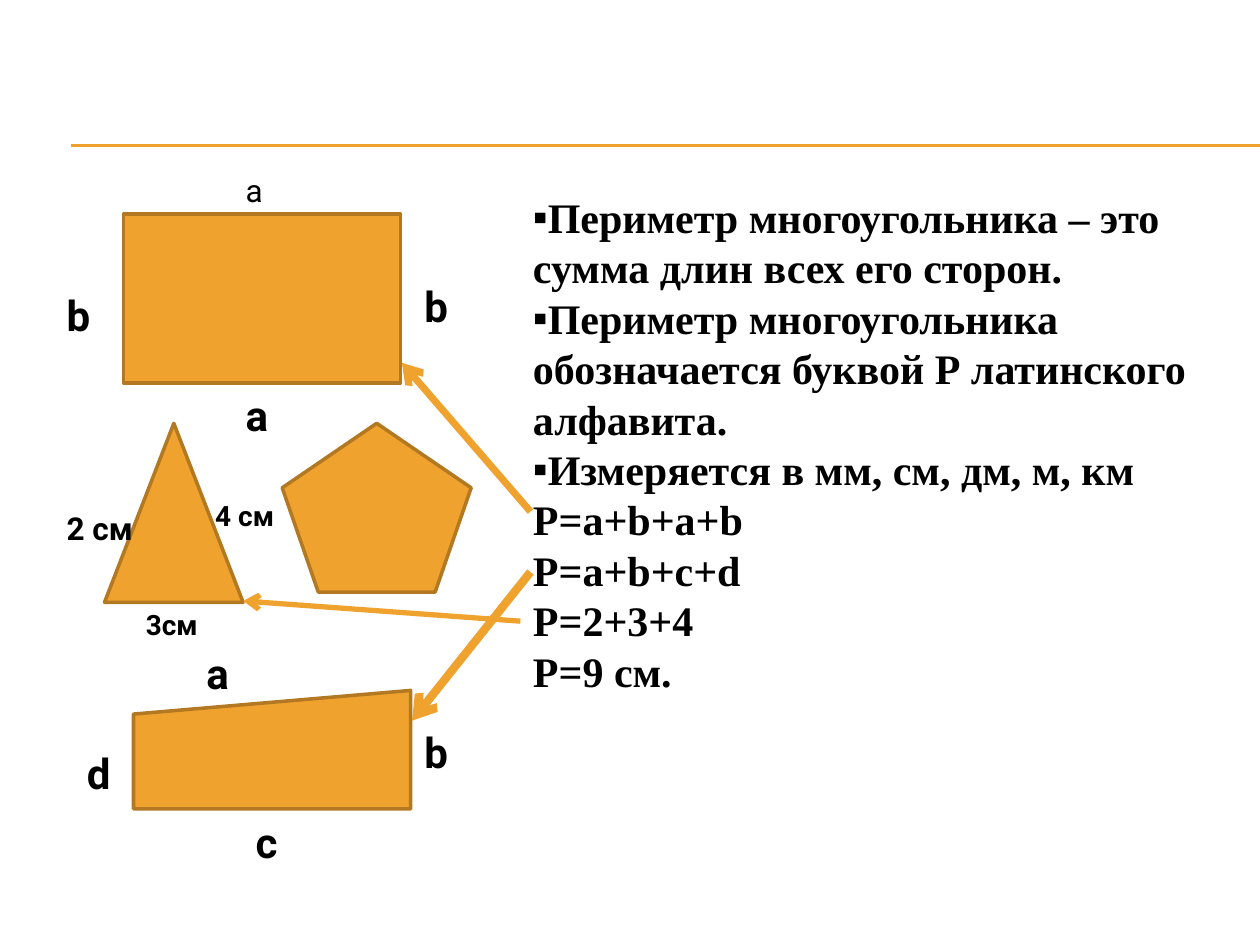
from dataclasses import dataclass

import pptx
import pptx.dml.color
import pptx.enum.shapes
import pptx.enum.text
import pptx.oxml
import pptx.oxml.ns
import pptx.util
from pptx.slide import Slide

SHAPE = pptx.enum.shapes.MSO_SHAPE
ALIGN = pptx.enum.text.PP_ALIGN
SLIDE_W = pptx.util.Inches(10)
SLIDE_H = pptx.util.Inches(7.5)
COL = SLIDE_W / 100
ROW = SLIDE_H / 75


@dataclass(frozen=True)
class Theme:
    accent: str = "F0A22E"
    edge: str = "B27822"
    ink: str = "000000"
    body_font: str = "Times New Roman"
    label_font: str = "Roboto"
    large: int = 24
    medium: int = 18
    small: int = 16
    body_leading: float = 28.8
    edge_width: float = 2
    rule_width: float = 0.75


@dataclass(frozen=True)
class Figure:
    kind: SHAPE
    col: float
    row: float
    cols: float
    rows: float


@dataclass(frozen=True)
class Label:
    text: str
    col: float
    row: float
    cols: float = 3.9
    rows: float = 5
    size: int = Theme.large
    bold: bool = True


@dataclass(frozen=True)
class Line:
    start: tuple[float, float]
    end: tuple[float, float]
    width: float = Theme.rule_width
    arrow: bool = False


T = Theme()

RULES = [Line((5.6, row), (100, row)) for row in (11.5, 11.6)]
FIGURES = [
    Figure(SHAPE.RECTANGLE, 9.8, 17, 22, 13.4),
    Figure(SHAPE.ISOSCELES_TRIANGLE, 8.3, 33.6, 11, 14.2),
    Figure(SHAPE.REGULAR_PENTAGON, 22.4, 33.6, 15, 13.4),
    Figure(SHAPE.FLOWCHART_MANUAL_INPUT, 10.6, 54.8, 22, 9.4),
]
LABELS = [
    Label("a", 18.5, 13.1, rows=4, size=T.medium, bold=False),
    Label("b", 32.7, 21.8),
    Label("b", 4.3, 22.5),
    Label("a", 18.5, 30.4, cols=3.1),
    Label("2 см", 4.3, 39.9, 9.1, 4, T.medium),
    Label("4 см", 16.1, 39.1, 7.1, 3.7, T.small),
    Label("3см", 10.6, 47.7, 8.7, 3.7, T.small),
    Label("a", 15.4, 50.9),
    Label("b", 32.7, 57.2),
    Label("c", 19.3, 64.3),
    Label("d", 5.9, 58.8),
]
ARROWS = [
    Line((42.1, 40.6), (31.9, 28.8), 4, True),
    Line((42.1, 45.4), (32.7, 57.2), 4.75, True),
    Line((41.3, 49.3), (19.3, 47.7), 3, True),
]
FACTS = [
    "Периметр многоугольника – это сумма длин всех его сторон.",
    "Периметр многоугольника обозначается буквой Р латинского алфавита.",
    "Измеряется в мм, см, дм, м, км",
]
FORMULAS = ["P=a+b+a+b", "P=a+b+c+d", "P=2+3+4", "P=9 см."]


def rgb(value: str) -> pptx.dml.color.RGBColor:
    return pptx.dml.color.RGBColor.from_string(value)


def box(col: float, row: float, cols: float, rows: float) -> tuple[int, ...]:
    return round(col * COL), round(row * ROW), round(cols * COL), round(rows * ROW)


def add_run(p, text: str, font: str, size: int, bold: bool = True) -> None:
    r = p.add_run()
    r.text = text
    r.font.name = font
    r.font.size = pptx.util.Pt(size)
    r.font.bold = bold
    r.font.color.rgb = rgb(T.ink)


def add_figure(s: Slide, figure: Figure) -> None:
    sp = s.shapes.add_shape(
        figure.kind, *box(figure.col, figure.row, figure.cols, figure.rows))
    sp.shadow.inherit = False
    sp.fill.solid()
    sp.fill.fore_color.rgb = rgb(T.accent)
    sp.line.color.rgb = rgb(T.edge)
    sp.line.width = pptx.util.Pt(T.edge_width)


def add_label(s: Slide, label: Label) -> None:
    sp = s.shapes.add_textbox(*box(label.col, label.row, label.cols, label.rows))
    tf = sp.text_frame
    tf.word_wrap = True
    add_run(tf.paragraphs[0], label.text, T.label_font, label.size, label.bold)


def add_line(s: Slide, line: Line) -> None:
    start = box(*line.start, 0, 0)[:2]
    end = box(*line.end, 0, 0)[:2]
    cxn = s.shapes.add_connector(
        pptx.enum.shapes.MSO_CONNECTOR.STRAIGHT, *start, *end)
    cxn.line.color.rgb = rgb(T.accent)
    cxn.line.width = pptx.util.Pt(line.width)
    if line.arrow:
        ln = cxn.line._get_or_add_ln()
        ln.append(pptx.oxml.parse_xml(
            f'<a:tailEnd {pptx.oxml.ns.nsdecls("a")} type="arrow"/>'))
    cxn._element.spPr.append(pptx.oxml.parse_xml(
        f'<a:effectLst {pptx.oxml.ns.nsdecls("a")}/>'))


def set_bullet(p, char: str | None) -> None:
    pPr = p._p.get_or_add_pPr()
    pPr.set("marL", "0")
    pPr.set("indent", "0")
    tag = f'buChar char="{char}"' if char else "buNone"
    name, _, attributes = tag.partition(" ")
    pPr.append(pptx.oxml.parse_xml(
        f'<a:{name} {pptx.oxml.ns.nsdecls("a")} {attributes}/>'))


def fill_body(s: Slide) -> None:
    sp = s.placeholders[1]
    sp.left, sp.top, sp.width, sp.height = box(41.3, 14.7, 58.7, 50.5)
    tf = sp.text_frame
    tf.word_wrap = True
    tf.auto_size = pptx.enum.text.MSO_AUTO_SIZE.NONE
    tf.vertical_anchor = pptx.enum.text.MSO_ANCHOR.TOP
    for i, text in enumerate(FACTS + FORMULAS):
        p = tf.add_paragraph() if i else tf.paragraphs[0]
        is_fact = i < len(FACTS)
        p.alignment = ALIGN.LEFT if is_fact else ALIGN.JUSTIFY
        p.space_before = pptx.util.Pt(0)
        p.line_spacing = pptx.util.Pt(T.body_leading)
        set_bullet(p, "▪" if is_fact else None)
        add_run(p, text, T.body_font, T.large)


def main() -> None:
    prs = pptx.Presentation()
    prs.slide_width, prs.slide_height = SLIDE_W, SLIDE_H
    s = prs.slides.add_slide(prs.slide_layouts[1])
    title = s.shapes.title._element
    title.getparent().remove(title)
    for rule in RULES:
        add_line(s, rule)
    for figure in FIGURES:
        add_figure(s, figure)
    fill_body(s)
    for label in LABELS:
        add_label(s, label)
    for arrow in ARROWS:
        add_line(s, arrow)
    prs.save("out.pptx")


if __name__ == "__main__":
    main()
